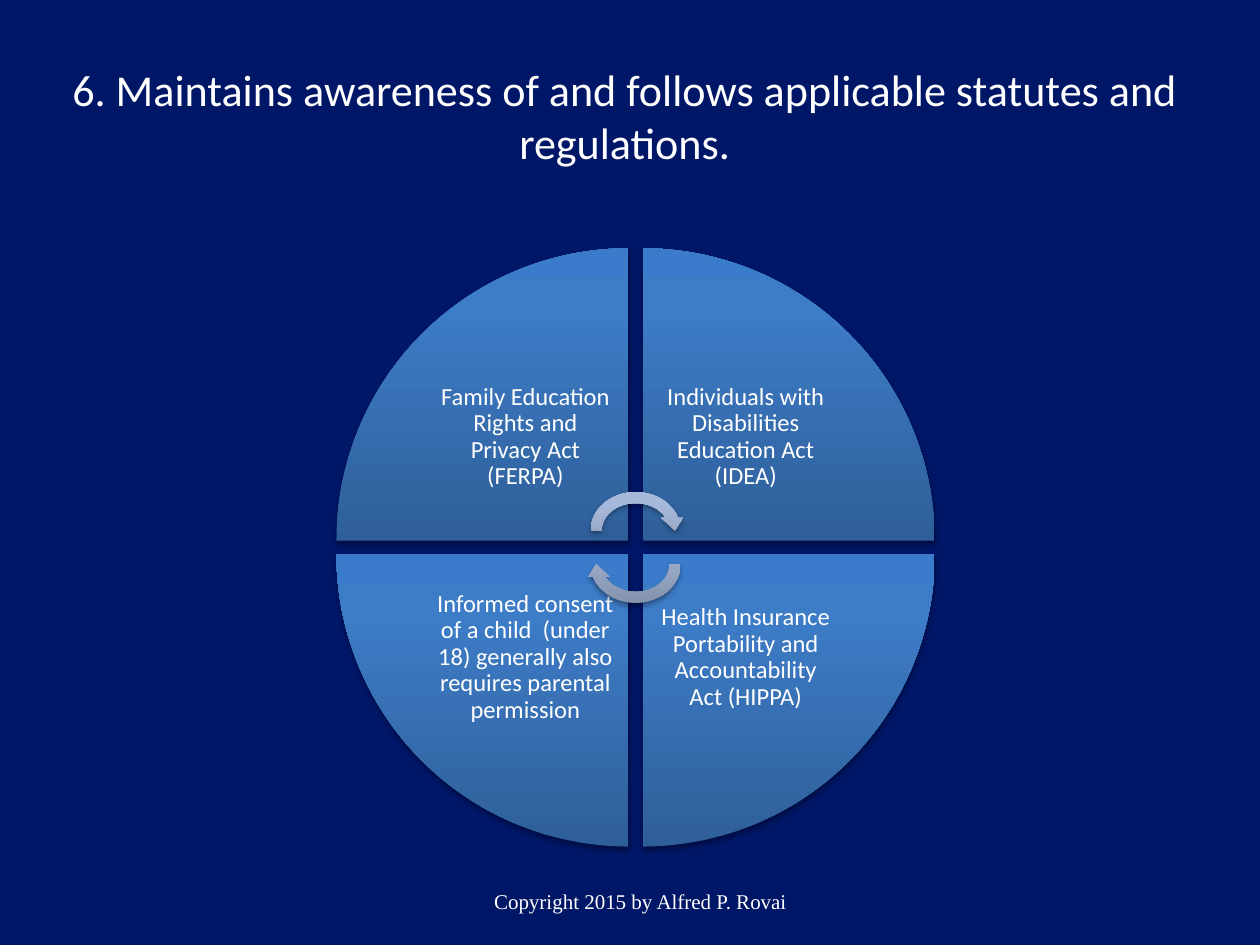
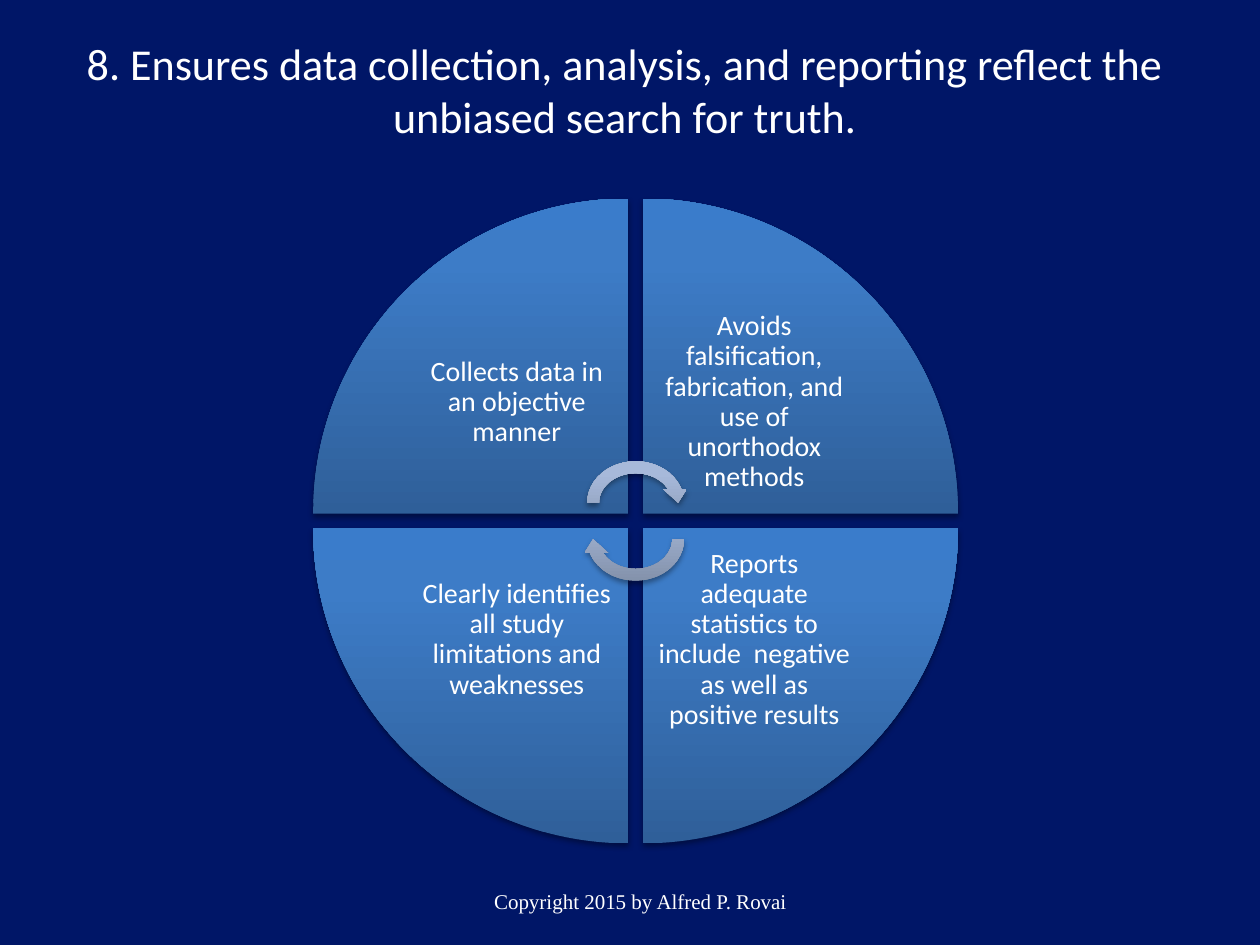
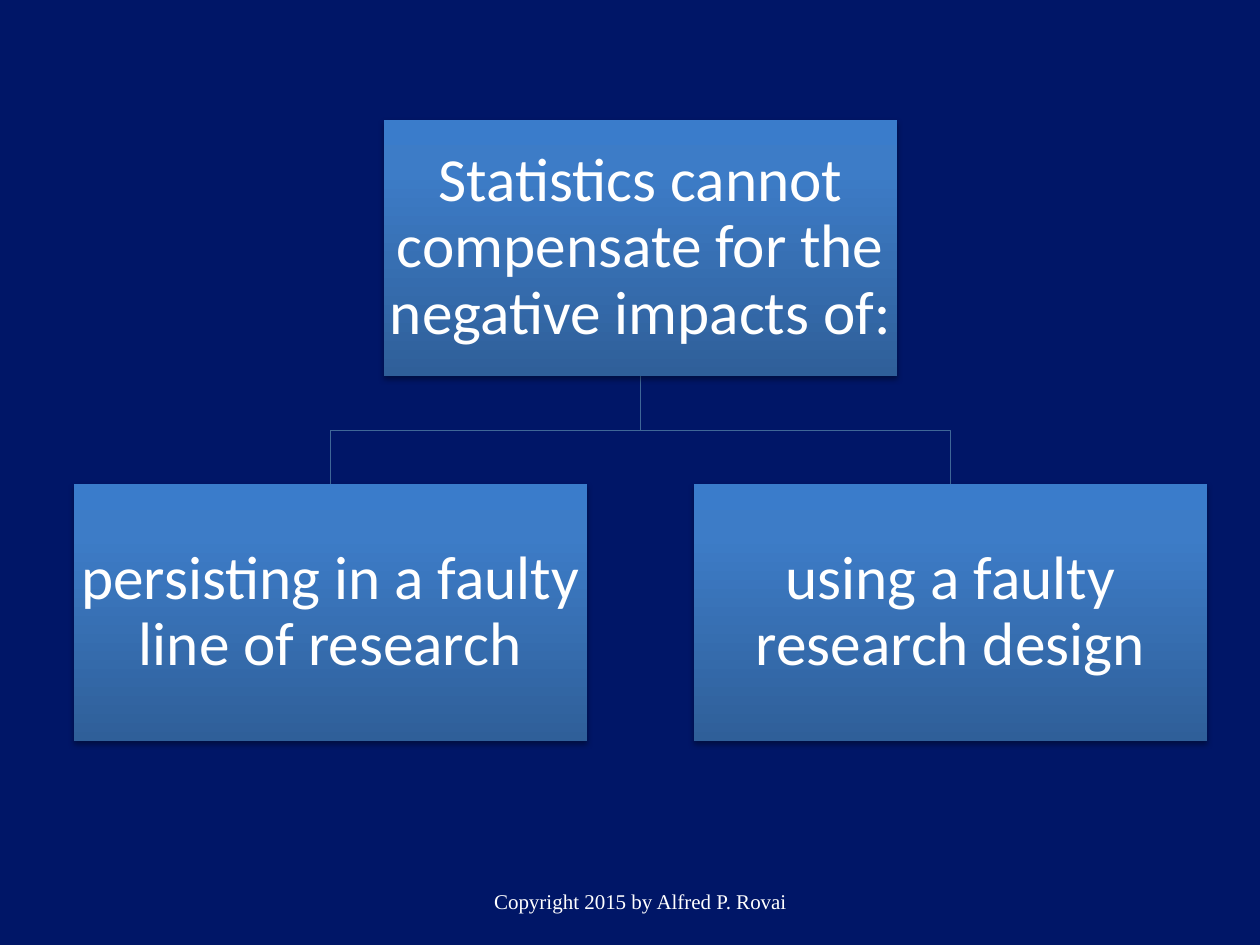
import pptx
import pptx.dml.color
import pptx.enum.shapes
import pptx.enum.text
import pptx.oxml
import pptx.oxml.ns
import pptx.util

Pt = pptx.util.Pt
RGBColor = pptx.dml.color.RGBColor
MSO_SHAPE = pptx.enum.shapes.MSO_SHAPE
qn = pptx.oxml.ns.qn
NSDECLS = pptx.oxml.ns.nsdecls("a")

NAVY = RGBColor(0x00, 0x16, 0x67)
WHITE = RGBColor(0xFF, 0xFF, 0xFF)
BLACK = RGBColor(0x00, 0x00, 0x00)
LINE_BLUE = RGBColor(0x3F, 0x67, 0x97)
# Gradient colours from the bottom edge upwards
BLUE_SHADES = (RGBColor(0x2F, 0x5F, 0x99), RGBColor(0x3D, 0x7C, 0xC7),
               RGBColor(0x3A, 0x7C, 0xCB))
GREY_SHADES = (RGBColor(0x81, 0x8F, 0xA8), RGBColor(0xA7, 0xB9, 0xDA),
               RGBColor(0xA7, 0xBA, 0xDC))
STOPS = (0, 80000, 100000)

BODY_FONT = "Calibri"
FOOTER_FONT = "Times New Roman"
FOOTER = "Copyright 2015 by Alfred P. Rovai"
TITLE_ONLY, BLANK = 5, 6
CENTER_X = 363.2


def write(shape, text, size, font=BODY_FONT, inset=None, spacing=None):
    """Put one centred white run into the shape."""
    tf = shape.text_frame
    tf.word_wrap = True
    tf.auto_size = pptx.enum.text.MSO_AUTO_SIZE.NONE
    tf.vertical_anchor = pptx.enum.text.MSO_ANCHOR.MIDDLE
    if inset is not None:
        tf.margin_left = tf.margin_right = Pt(inset)
        tf.margin_top = tf.margin_bottom = Pt(inset)
    p = tf.paragraphs[0]
    p.alignment = pptx.enum.text.PP_ALIGN.CENTER
    if spacing:
        p.line_spacing = spacing
    r = p.add_run()
    r.text = text
    r.font.name = font
    r.font.size = Pt(size)
    r.font.color.rgb = WHITE


def add_textbox(slide, x, y, w, h, text, size, **style):
    write(slide.shapes.add_textbox(Pt(x), Pt(y), Pt(w), Pt(h)), text, size, **style)


def add_glossy_shape(slide, kind, x, y, w, h, shades, rotation=0):
    """Add a shape with an upright gradient and a soft shadow below."""
    sp = slide.shapes.add_shape(kind, Pt(x), Pt(y), Pt(w), Pt(h))
    sp.rotation = rotation
    sp.line.fill.background()
    sp.fill.gradient()
    sp.shadow.inherit = False
    spPr = sp._element.spPr
    stops = "".join(
        f'<a:gs pos="{pos}"><a:srgbClr val="{shade}"/></a:gs>'
        for pos, shade in zip(STOPS, shades))
    spPr.replace(spPr.find(qn("a:gradFill")), pptx.oxml.parse_xml(
        f'<a:gradFill {NSDECLS} rotWithShape="0"><a:gsLst>{stops}</a:gsLst>'
        '<a:lin ang="16200000" scaled="0"/></a:gradFill>'))
    spPr.find(qn("a:effectLst")).append(pptx.oxml.parse_xml(
        f'<a:outerShdw {NSDECLS} blurRad="{Pt(3.1)}" dist="{Pt(1.8)}" dir="5400000" '
        f'rotWithShape="0"><a:srgbClr val="{BLACK}"><a:alpha val="35000"/></a:srgbClr>'
        '</a:outerShdw>'))
    return sp


def add_slide(prs, layout, title=None, title_top=30):
    slide = prs.slides.add_slide(prs.slide_layouts[layout])
    if title:
        sp = slide.shapes.title
        sp.left, sp.top, sp.width, sp.height = Pt(30), Pt(title_top), Pt(654), Pt(72)
        write(sp, title, 25.2)
    add_textbox(slide, 126, 500.4, 480, 28.8, FOOTER, 12, font=FOOTER_FONT)
    return slide


def add_wheel(slide, center_y, radius, size, texts):
    """Draw four wedges, clockwise from top left, and the two arrows at the hub."""
    half_gap = 0.0235 * radius
    side = radius / 2 ** 0.5
    corners = ((-1, -1), (1, -1), (1, 1), (-1, 1))

    def offset(direction, length):
        return half_gap if direction > 0 else -half_gap - length

    for i, ((dx, dy), text) in enumerate(zip(corners, texts)):
        add_glossy_shape(slide, MSO_SHAPE.PIE_WEDGE, CENTER_X + offset(dx, radius),
                         center_y + offset(dy, radius), radius, radius,
                         BLUE_SHADES, 90 * i)
        add_textbox(slide, CENTER_X + offset(dx, side), center_y + offset(dy, side),
                    side, side, text, size, inset=0.56 * size, spacing=0.9)

    w, h = 0.345 * radius, 0.3 * radius
    for direction, rotation in ((-1, 0), (1, 180)):
        y = center_y + direction * 0.058 * radius
        add_glossy_shape(slide, MSO_SHAPE.CIRCULAR_ARROW, CENTER_X - w / 2, y - h / 2,
                         w, h, GREY_SHADES, rotation)


def add_branch(slide, x1, y1, x2, y2):
    """Draw a thin elbow line that turns halfway down."""
    mid = (y1 + y2) / 2
    points = [(Pt(x), Pt(y)) for x, y in ((x1, mid), (x2, mid), (x2, y2))]
    builder = slide.shapes.build_freeform(Pt(x1), Pt(y1))
    sp = builder.add_line_segments(points, close=False).convert_to_shape()
    sp.fill.background()
    sp.line.color.rgb = LINE_BLUE
    sp.line.width = Pt(0.75)
    sp.shadow.inherit = False


def add_tree(slide, parent, children):
    w, h, gap = 293.2, 146.6, 61.2
    center_x, parent_top, child_top = 366, 68.5, 276.7
    first = center_x - (len(children) - 1) * (w + gap) / 2
    child_xs = [first + i * (w + gap) for i in range(len(children))]
    for x in child_xs:
        add_branch(slide, center_x, parent_top + h, x, child_top)
    boxes = [(center_x, parent_top, parent)]
    boxes += [(x, child_top, text) for x, text in zip(child_xs, children)]
    for x, y, text in boxes:
        sp = add_glossy_shape(slide, MSO_SHAPE.RECTANGLE, x - w / 2, y, w, h, BLUE_SHADES)
        write(sp, text, 35, inset=1.75, spacing=0.9)


def main():
    prs = pptx.Presentation()
    prs.slide_width, prs.slide_height = Pt(720), Pt(540)
    fill = prs.slide_master.background.fill
    fill.solid()
    fill.fore_color.rgb = NAVY

    slide = add_slide(prs, TITLE_ONLY, "6. Maintains awareness of and follows "
                      "applicable statutes and regulations.")
    add_wheel(slide, 312.8, 167, 14, (
        "Family Education Rights and Privacy Act (FERPA)",
        "Individuals with Disabilities Education Act (IDEA)",
        "Health Insurance Portability and Accountability Act (HIPPA)",
        "Informed consent of a child  (under 18) generally also requires "
        "parental permission"))

    slide = add_slide(prs, TITLE_ONLY, "8. Ensures data collection, analysis, and "
                      "reporting reflect the unbiased search for truth.", title_top=15)
    add_wheel(slide, 297.7, 180, 16, (
        "Collects data in an objective manner",
        "Avoids falsification, fabrication, and use of unorthodox methods",
        "Reports adequate statistics to include  negative as well as positive results",
        "Clearly identifies all study limitations and weaknesses"))

    slide = add_slide(prs, BLANK)
    add_tree(slide, "Statistics cannot compensate for the negative impacts of:",
             ("persisting in a faulty line of research", "using a faulty research design"))

    prs.save("out.pptx")


if __name__ == "__main__":
    main()
